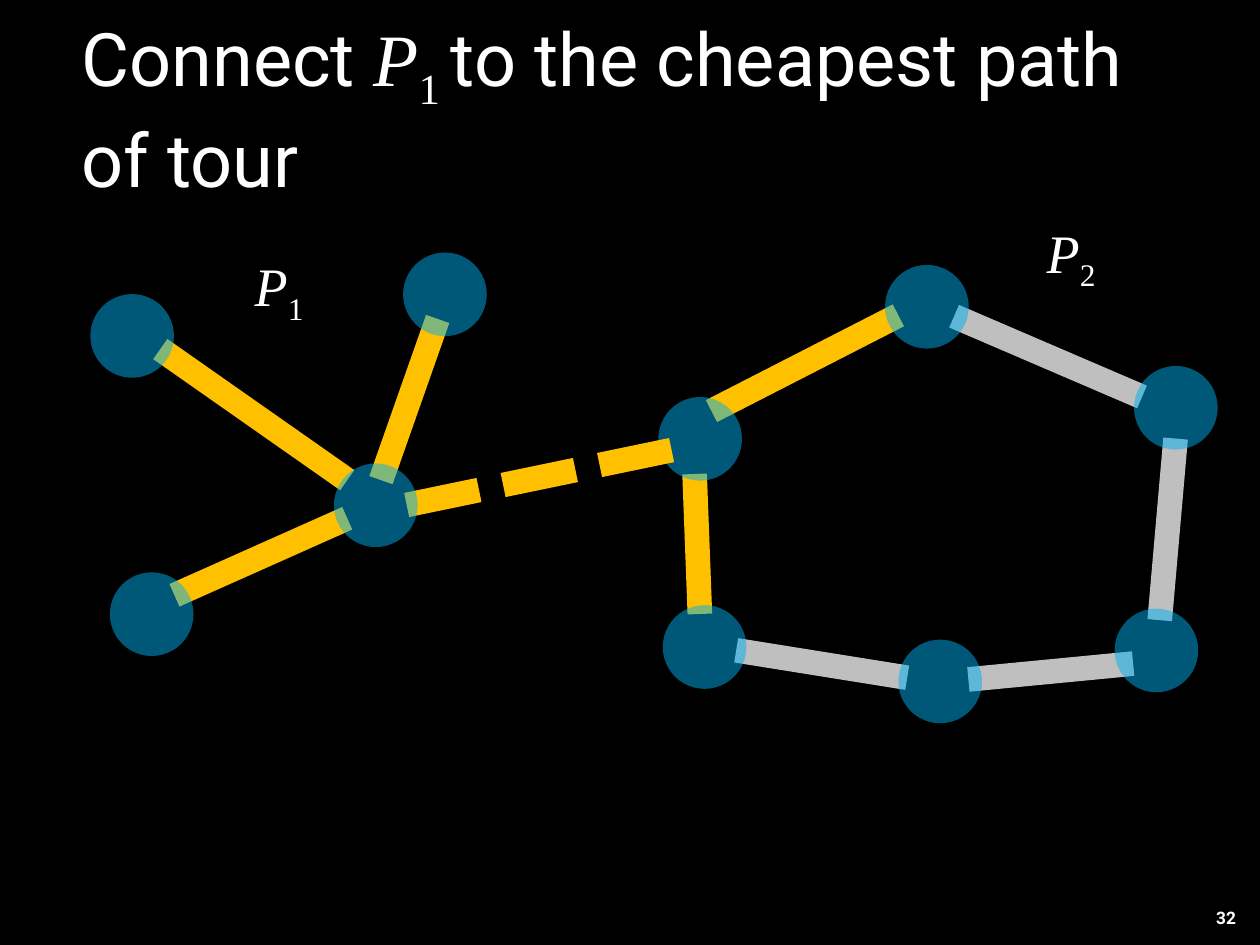
from lxml.etree import SubElement
from pptx import Presentation
from pptx.dml.color import RGBColor
from pptx.enum.dml import MSO_LINE
from pptx.enum.shapes import MSO_CONNECTOR, MSO_SHAPE
from pptx.enum.text import MSO_ANCHOR, PP_ALIGN
from pptx.oxml.ns import qn
from pptx.util import Pt

BLACK = RGBColor(0x00, 0x00, 0x00)
WHITE = RGBColor(0xFF, 0xFF, 0xFF)
BLUE = RGBColor(0x00, 0xB0, 0xF0)
YELLOW = RGBColor(0xFF, 0xC0, 0x00)
GRAY = RGBColor(0xBF, 0xBF, 0xBF)

SANS = "Roboto"
SERIF = "Times New Roman"
NODE_SIZE = 68
EDGE_WIDTH = 20

HUB = (271.4, 376.6)
NODES = [
    (89.3, 465.1), (73.4, 239), (327.6, 205.2),
    (538.6, 491.8), (535, 322.6), (730.1, 519.8),
    (905.8, 494.6), (719.3, 215.3), (921.6, 297.4),
]
CHOSEN_EDGES = [
    (130.3, 283.7, 282.2, 390.2),
    (282.2, 421.2, 141.8, 483.8),
    (355.7, 259.2, 309.6, 390.2),
    (564.5, 385.2, 568.8, 499),
    (730.1, 256.3, 578.2, 334.1),
]
OTHER_EDGES = [
    (955.4, 356.4, 942.5, 504),
    (598.3, 528.5, 737.3, 550.8),
    (920.9, 539.3, 787, 552.2),
    (775.4, 257, 928.1, 322.6),
]
LINK = (330.5, 410.4, 545.8, 365.8)


def add_node(slide, left, top):
    shape = slide.shapes.add_shape(
        MSO_SHAPE.OVAL, Pt(left), Pt(top), Pt(NODE_SIZE), Pt(NODE_SIZE))
    shape.shadow.inherit = False
    shape.line.fill.background()
    shape.fill.solid()
    shape.fill.fore_color.rgb = BLUE
    color = shape._element.spPr.find(f"{qn('a:solidFill')}/{qn('a:srgbClr')}")
    SubElement(color, qn("a:alpha"), val="50000")


def add_edge(slide, ends, color, dash=None):
    edge = slide.shapes.add_connector(
        MSO_CONNECTOR.STRAIGHT, *[Pt(value) for value in ends])
    edge.line.color.rgb = color
    edge.line.width = Pt(EDGE_WIDTH)
    if dash:
        edge.line.dash_style = dash
    SubElement(edge._element.spPr, qn("a:effectLst"))


def add_text_box(slide, box, size, alignment, wrap=False):
    shape = slide.shapes.add_textbox(*[Pt(value) for value in box])
    frame = shape.text_frame
    frame.word_wrap = wrap
    frame.vertical_anchor = MSO_ANCHOR.MIDDLE
    paragraph = frame.paragraphs[0]
    paragraph.alignment = alignment
    paragraph.font.size = Pt(size)
    paragraph.font.color.rgb = WHITE
    return frame, paragraph


def add_run(paragraph, text, font_name):
    run = paragraph.add_run()
    run.text = text
    run.font.name = font_name
    return run


def add_variable(paragraph, letter, subscript):
    add_run(paragraph, letter, SERIF).font.italic = True
    run = add_run(paragraph, subscript, SERIF)
    run._r.get_or_add_rPr().set("baseline", "-25000")


def add_title(slide):
    frame, paragraph = add_text_box(
        slide, (61.9, 20.2, 900, 133.9), 60, PP_ALIGN.LEFT, wrap=True)
    frame.margin_left = frame.margin_right = Pt(4.3)
    frame.margin_top = frame.margin_bottom = Pt(4.3)
    add_run(paragraph, "Connect ", SANS)
    add_variable(paragraph, "P", "1 ")
    add_run(paragraph, "to the cheapest path of tour", SANS)


def add_label(slide, left, top, subscript):
    _, paragraph = add_text_box(
        slide, (left, top, 56.2, 60.5), 44, PP_ALIGN.CENTER)
    add_variable(paragraph, "P", subscript)


def add_page_number(slide, number):
    frame, paragraph = add_text_box(
        slide, (987.1, 733, 24.5, 25.2), 14, PP_ALIGN.RIGHT)
    frame.margin_left = Pt(0)
    paragraph.font.bold = True
    add_run(paragraph, number, SANS)


def main():
    presentation = Presentation()
    presentation.slide_width = Pt(1024)
    presentation.slide_height = Pt(768)
    slide = presentation.slides.add_slide(presentation.slide_layouts[6])
    slide.background.fill.solid()
    slide.background.fill.fore_color.rgb = BLACK

    add_title(slide)
    add_label(slide, 198.7, 205.2, "1")
    add_label(slide, 842.4, 177.8, "2")
    for ends in CHOSEN_EDGES:
        add_edge(slide, ends, YELLOW)
    for ends in OTHER_EDGES:
        add_edge(slide, ends, GRAY)
    for left, top in NODES:
        add_node(slide, left, top)
    add_edge(slide, LINK, YELLOW, MSO_LINE.SQUARE_DOT)
    # sysDash has no member name of its own in MSO_LINE
    link = slide.shapes[-1]
    link.line._ln.find(qn("a:prstDash")).set("val", "sysDash")
    add_node(slide, *HUB)
    add_page_number(slide, "32")
    presentation.save("out.pptx")


if __name__ == "__main__":
    main()
